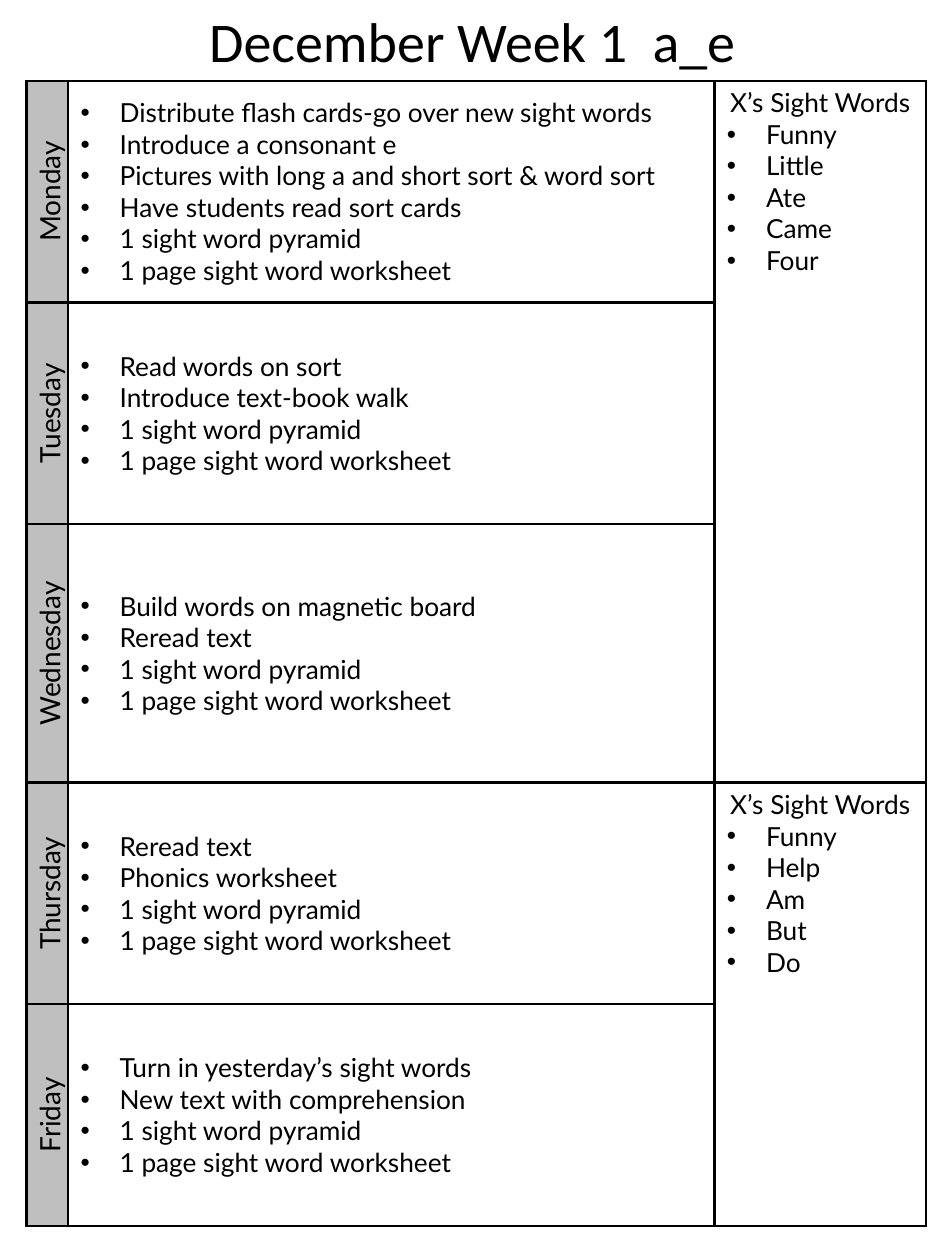
from lxml.etree import SubElement
from pptx import Presentation
from pptx.dml.color import RGBColor
from pptx.enum.text import MSO_ANCHOR as Anchor, MSO_AUTO_SIZE as AutoSize, PP_ALIGN as Align
from pptx.oxml.ns import qn
from pptx.util import Inches, Pt

WIDTH, HEIGHT = 7.5, 10
DAILY = ["1 sight word pyramid", "1 page sight word worksheet"]
PLANS = {
    "Monday": ["Distribute flash cards-go over new sight words",
               "Introduce a consonant e",
               "Pictures with long a and short sort & word sort",
               "Have students read sort cards"],
    "Tuesday": ["Read words on sort", "Introduce text-book walk"],
    "Wednesday": ["Build words on magnetic board", "Reread text"],
    "Thursday": ["Reread text", "Phonics worksheet"],
    "Friday": ["Turn in yesterday’s sight words", "New text with comprehension"],
}
# First day, last day and words of each sight word list
SIGHT_WORDS = [
    (0, 2, ["Funny", "Little", "Ate", "Came", "Four"]),
    (3, 4, ["Funny", "Help", "Am", "But", "Do"]),
]
COLUMN_WIDTHS = [0.33, 5.13, 1.68]
DAY_HEIGHTS = [1.76, 1.76, 2.05, 1.76, 1.76]


def color(hex_code):
    return RGBColor.from_string(hex_code)


class Planner:
    ink, shade = "000000", "BFBFBF"
    title_font, body_font = "Calibri", "Lato"
    title_size, day_size, body_size = 32, 16, 15
    indent, border = Inches(0.31), Pt(1.5)

    def __init__(self, slide):
        self.slide = slide

    def add_text(self, paragraph, text, font, size, align=Align.LEFT):
        paragraph.alignment = align
        run = paragraph.add_run()
        run.text = text
        run.font.name, run.font.size = font, Pt(size)
        run.font.color.rgb = color(self.ink)

    def title(self, text, height):
        heading = self.slide.shapes.title
        heading.left, heading.top = 0, 0
        heading.width, heading.height = Inches(WIDTH), Inches(height)
        frame = heading.text_frame
        frame.auto_size, frame.vertical_anchor = AutoSize.NONE, Anchor.TOP
        self.add_text(frame.paragraphs[0], text, self.title_font, self.title_size, Align.CENTER)

    def grid(self, left, top, widths, heights):
        table = self.slide.shapes.add_table(
            len(heights), len(widths), Inches(left), Inches(top),
            Inches(sum(widths)), Inches(sum(heights))).table
        table.first_row = table.horz_banding = False
        for column, width in zip(table.columns, widths):
            column.width = Inches(width)
        for row, height in zip(table.rows, heights):
            row.height = Inches(height)
        for cell in table.iter_cells():
            self.outline(cell)
            cell.fill.background()
        return table

    def outline(self, cell):
        properties = cell._tc.get_or_add_tcPr()
        for side in "LRTB":
            line = SubElement(properties, qn(f"a:ln{side}"), w=str(self.border))
            SubElement(SubElement(line, qn("a:solidFill")), qn("a:srgbClr"), val=self.ink)

    def day(self, cell, name):
        cell.fill.solid()
        cell.fill.fore_color.rgb = color(self.shade)
        cell.vertical_anchor = Anchor.MIDDLE
        cell._tc.get_or_add_tcPr().set("vert", "vert270")
        self.add_text(cell.text_frame.paragraphs[0], name, self.body_font, self.day_size, Align.CENTER)

    def bullets(self, cell, items, heading=None, anchor=Anchor.TOP):
        cell.vertical_anchor = anchor
        frame = cell.text_frame
        paragraph = frame.paragraphs[0]
        if heading:
            self.add_text(paragraph, heading, self.body_font, self.body_size, Align.CENTER)
        for number, item in enumerate(items):
            if number or heading:
                paragraph = frame.add_paragraph()
            properties = paragraph._p.get_or_add_pPr()
            properties.set("marL", str(self.indent))
            properties.set("indent", str(-self.indent))
            SubElement(properties, qn("a:buFont"), typeface="Arial")
            SubElement(properties, qn("a:buChar"), char="•")
            self.add_text(paragraph, item, self.body_font, self.body_size)


def main():
    deck = Presentation()
    deck.slide_width, deck.slide_height = Inches(WIDTH), Inches(HEIGHT)
    planner = Planner(deck.slides.add_slide(deck.slide_layouts[5]))
    planner.title("December Week 1  a_e", 0.64)
    week = planner.grid(0.21, 0.64, COLUMN_WIDTHS, DAY_HEIGHTS)
    for row, (name, lessons) in enumerate(PLANS.items()):
        planner.day(week.cell(row, 0), name)
        planner.bullets(week.cell(row, 1), lessons + DAILY, anchor=Anchor.MIDDLE)
    for first, last, words in SIGHT_WORDS:
        word_list = week.cell(first, 2)
        word_list.merge(week.cell(last, 2))
        planner.bullets(word_list, words, heading="X’s Sight Words")
    deck.save("out.pptx")


if __name__ == "__main__":
    main()
